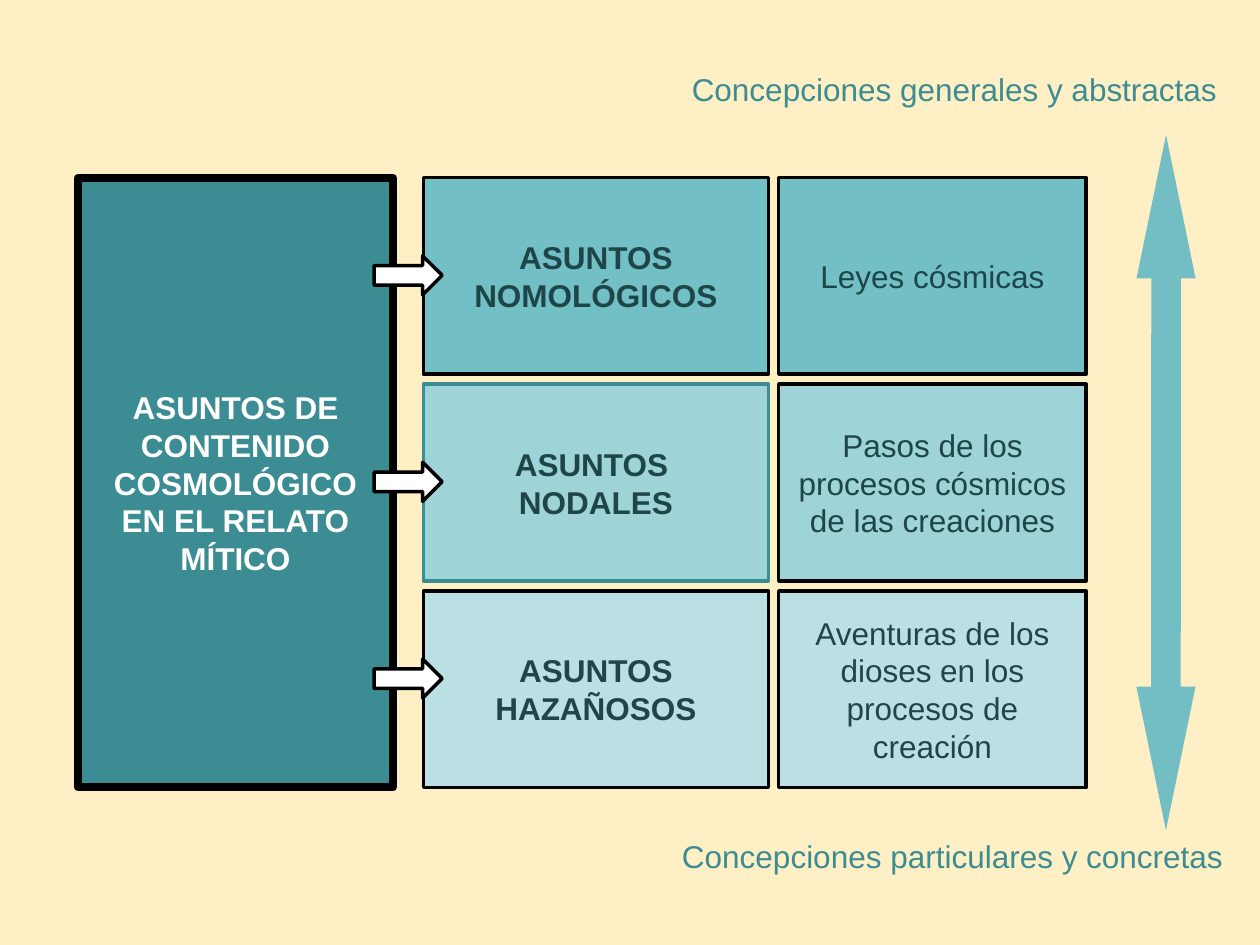
from lxml.etree import SubElement
from pptx import Presentation
from pptx.dml.color import RGBColor
from pptx.enum.shapes import MSO_SHAPE as SHAPE
from pptx.enum.text import MSO_ANCHOR as ANCHOR, PP_ALIGN as ALIGN
from pptx.oxml.ns import qn
from pptx.util import Pt

# Content: category, explanation, fill, outline of the category box, arrow top
ROWS = [
    ("ASUNTOS NOMOLÓGICOS", "Leyes cósmicas", "72BFC5", "000000", 146.2),
    ("ASUNTOS \nNODALES", "Pasos de los procesos cósmicos de las creaciones",
     "9ED3D7", "3C8C93", 264.2),
    ("ASUNTOS HAZAÑOSOS", "Aventuras de los dioses en los procesos de creación",
     "BBE0E3", "000000", 376.6),
]
TOPIC = "ASUNTOS DE CONTENIDO COSMOLÓGICO EN EL RELATO MÍTICO"
SCALE_LABELS = [  # text, left, top, width
    ("Concepciones generales y abstractas", 379.4, 33.8, 332),
    ("Concepciones particulares y concretas", 365.8, 472.3, 357),
]

# Layout
TOP, ROW_H, GAP = 101.5, 112.3, 5.8
TOPIC_X, TOPIC_W = 44.6, 180
CATEGORY_X, CATEGORY_W = 241.9, 197.3
DETAIL_X, DETAIL_W = 445, 175.7
ARROW_X, ARROW_W, ARROW_H = 213.8, 38.9, 22.3
SCALE_X, SCALE_W, SCALE_H = 649.4, 33.8, 283.7
TEAL, INK = "3C8C93", "1E4649"


def rgb(color):
    return RGBColor.from_string(color)


def write(sp, text, color=INK, bold=False):
    tf = sp.text_frame
    tf.word_wrap = True
    tf.vertical_anchor = ANCHOR.MIDDLE
    for i, line in enumerate(text.split("\n")):
        p = tf.paragraphs[0] if i == 0 else tf.add_paragraph()
        p.alignment = ALIGN.CENTER
        r = p.add_run()
        r.text = line
        r.font.name, r.font.size, r.font.bold = "Arial", Pt(18), bold
        r.font.color.rgb = rgb(color)


def shape(kind, x, y, w, h, fill, line=None, weight=2):
    sp = s.shapes.add_shape(kind, Pt(x), Pt(y), Pt(w), Pt(h))
    sp.shadow.inherit = False
    sp.fill.solid()
    sp.fill.fore_color.rgb = rgb(fill)
    if line:
        sp.line.color.rgb = rgb(line)
        sp.line.width = Pt(weight)
        SubElement(sp.line._get_or_add_ln(), qn("a:round"))
    else:
        sp.line.fill.background()
    return sp


prs = Presentation()
prs.slide_width, prs.slide_height = Pt(720), Pt(540)
s = prs.slides.add_slide(prs.slide_layouts[6])
s.background.fill.solid()
s.background.fill.fore_color.rgb = rgb("FFEFC4")

# Labels at the two ends of the scale
for text, x, y, w in SCALE_LABELS:
    write(s.shapes.add_textbox(Pt(x), Pt(y), Pt(w), Pt(33.8)), text, color=TEAL)

# Main topic
topic_h = len(ROWS) * ROW_H + (len(ROWS) - 1) * GAP
topic = shape(SHAPE.RECTANGLE, TOPIC_X, TOP, TOPIC_W, topic_h, TEAL, "000000", 4.5)
write(topic, TOPIC, color="FFFFFF", bold=True)

# Rows of category and explanation
for i, (category, detail, fill, line, _) in enumerate(ROWS):
    y = TOP + i * (ROW_H + GAP)
    write(shape(SHAPE.RECTANGLE, CATEGORY_X, y, CATEGORY_W, ROW_H, fill, line),
          category, bold=True)
    write(shape(SHAPE.RECTANGLE, DETAIL_X, y, DETAIL_W, ROW_H, fill, "000000"), detail)

# Arrows from the topic to each category
for *_, y in ROWS:
    shape(SHAPE.RIGHT_ARROW, ARROW_X, y, ARROW_W, ARROW_H, "FFFFFF", "000000")

# Double-headed scale: two overlapping arrows
for y, rotation in [(190.8, 0), (77, 180)]:
    arrow = shape(SHAPE.DOWN_ARROW, SCALE_X, y, SCALE_W, SCALE_H, "72BEC4")
    arrow.adjustments[0], arrow.adjustments[1] = 0.5, 2.43
    arrow.rotation = rotation

prs.save("out.pptx")
